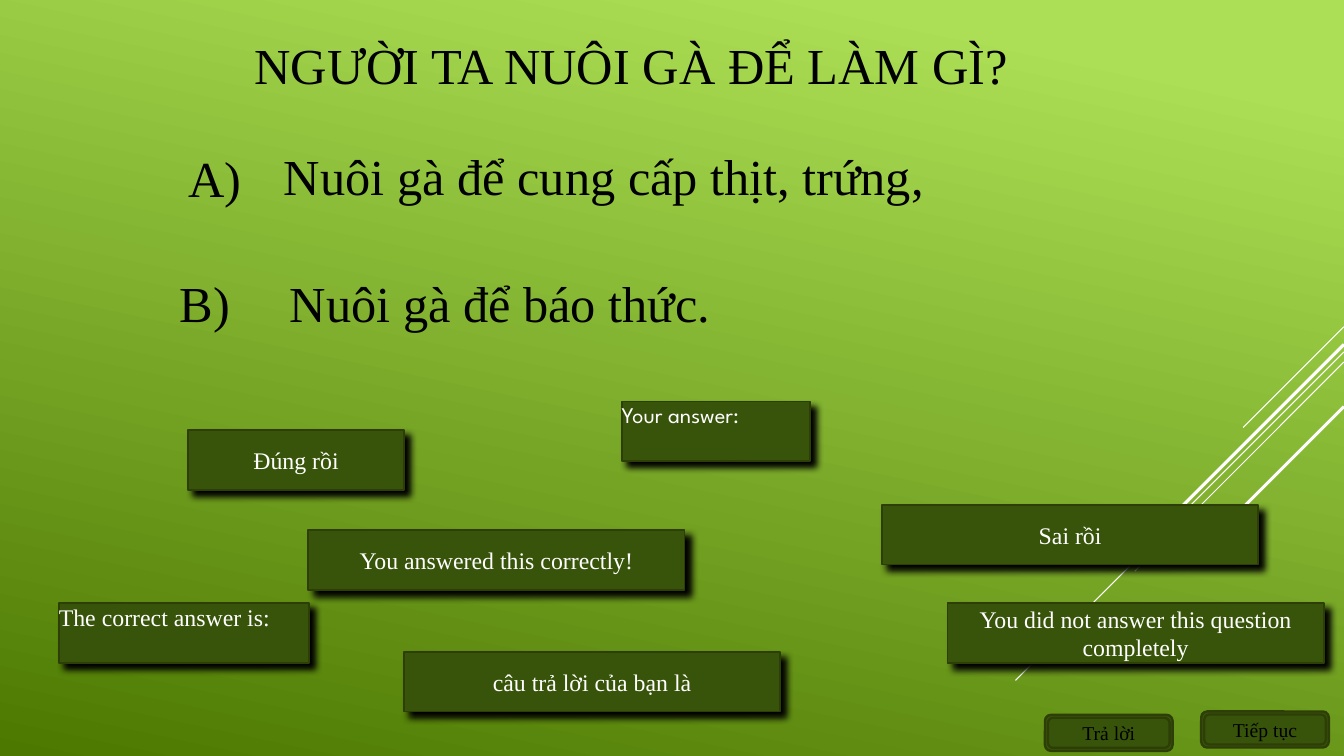
from lxml import etree
from pptx import Presentation
from pptx.dml.color import RGBColor
from pptx.enum.shapes import MSO_CONNECTOR, MSO_SHAPE
from pptx.enum.text import MSO_ANCHOR, PP_ALIGN
from pptx.oxml.ns import qn
from pptx.util import Inches, Pt

RECT = MSO_SHAPE.RECTANGLE
ROUND = MSO_SHAPE.ROUNDED_RECTANGLE
LINE = MSO_CONNECTOR.STRAIGHT
TOP, MID = MSO_ANCHOR.TOP, MSO_ANCHOR.MIDDLE
LEFT, CENTER = PP_ALIGN.LEFT, PP_ALIGN.CENTER

LIME = RGBColor(0xAC, 0xDF, 0x55)
MOSS = RGBColor(0x4C, 0x78, 0x00)
LEAF = RGBColor(0x38, 0x54, 0x0A)
EDGE = RGBColor(0x2E, 0x3E, 0x07)
WHITE = RGBColor(0xFF, 0xFF, 0xFF)
BLACK = RGBColor(0, 0, 0)
SERIF, SANS = "Times New Roman", "League Spartan"

COLS, ROWS = 160, 90
CARD = 7.1
BUTTON = (15.2, 4.3)
INSET = 0.36

RAYS = [(38.9, 12, 0.75), (41.9, 39.1, 0.75), (43.1, 24.9, 0.75),
        (41, 22.9, 2.25), (48.4, 16.7, 2.25)]
CARDS = [
    (22.4, 51.2, 25.7, "Đúng rồi", True, SERIF, 17),
    (105, 60.1, 44.8, "Sai rồi", True, SERIF, 17),
    (36.7, 63.1, 44.8, "You answered this correctly!", True, SERIF, 17),
    (74, 47.8, 22.4, "Your answer:", False, SANS, 16),
    (7, 71.8, 29.8, "The correct answer is:", False, SERIF, 17),
    (112.8, 71.8, 44.8, "You did not answer this question completely", True, SERIF, 17),
    (48.1, 77.6, 44.8, "câu trả lời của bạn là", True, SERIF, 17),
]
BUTTONS = [(124.4, 85.1, "Trả lời"), (143, 84.7, "Tiếp tục")]


def grid(*units):
    return [Inches(unit / 12) for unit in units]


def write(shape, words, size, color, font=SERIF, align=LEFT, anchor=MID):
    frame = shape.text_frame
    frame.text = words
    frame.word_wrap = True
    frame.vertical_anchor = anchor
    frame.margin_left = frame.margin_right = 0
    frame.margin_top = frame.margin_bottom = 0
    para = frame.paragraphs[0]
    para.alignment = align
    style = para.runs[0].font
    style.name, style.size = font, Pt(size)
    style.color.rgb = color


def label(slide, box, words, align=LEFT):
    write(slide.shapes.add_textbox(*grid(*box)), words, 36, BLACK, align=align)


def plate(slide, kind, box, width):
    shape = slide.shapes.add_shape(kind, *grid(*box))
    shape.shadow.inherit = False
    shape.fill.solid()
    shape.fill.fore_color.rgb = LEAF
    shape.line.color.rgb = EDGE
    shape.line.width = Pt(width)
    return shape


def shade(shape):
    effects = shape._element.spPr.find(qn("a:effectLst"))
    outer = etree.SubElement(effects, qn("a:outerShdw"), blurRad=str(Pt(5)),
                             dist=str(Pt(5.7)), dir=str(45 * 60000),
                             algn="tl", rotWithShape="0")
    etree.SubElement(outer, qn("a:srgbClr"), val=str(BLACK))


def backdrop(slide):
    fill = slide.background.fill
    fill.gradient()
    fill.gradient_angle = 258
    for stop, place, color in zip(fill.gradient_stops, (0.1, 1), (LIME, MOSS)):
        stop.position = place
        stop.color.rgb = color


def rays(slide, right):
    for top, run, width in RAYS:
        ray = slide.shapes.add_connector(LINE, *grid(right, top, right - run, top + run))
        ray.line.color.rgb = WHITE
        ray.line.width = Pt(width)
        etree.SubElement(ray._element.spPr, qn("a:effectLst"))


def option(slide, box, mark, words, gap, drop=0):
    left, top, width, height = box
    label(slide, (left, top + drop, gap, height), mark)
    label(slide, (left + gap, top, width - gap, height), words)


def card(slide, box, words, centred, font, size):
    shape = plate(slide, RECT, box, 1.33)
    shade(shape)
    align, anchor = (CENTER, MID) if centred else (LEFT, TOP)
    write(shape, words, size, WHITE, font, align, anchor)


def button(slide, box, words):
    left, top, width, height = box
    plate(slide, ROUND, box, 1.67)
    inner = (left + INSET, top + INSET, width - 2 * INSET, height - 2 * INSET)
    write(plate(slide, ROUND, inner, 1.67), words, 14, BLACK, align=CENTER)


def main():
    deck = Presentation()
    deck.slide_width, deck.slide_height = grid(COLS, ROWS)
    slide = deck.slides.add_slide(deck.slide_layouts[6])
    backdrop(slide)
    rays(slide, COLS)
    label(slide, (7.3, -2.3, 135.7, 19.8), "NGƯỜI TA NUÔI GÀ ĐỂ LÀM GÌ?", CENTER)
    for left, top, width, *rest in CARDS:
        card(slide, (left, top, width, CARD), *rest)
    for left, top, words in BUTTONS:
        button(slide, (left, top, *BUTTON), words)
    option(slide, (22.4, 13.3, 113.5, 15.1), "A)", "Nuôi gà để cung cấp thịt, trứng,", 11.4, 0.3)
    option(slide, (21.4, 32.4, 105.2, 7.2), "B)", "Nuôi gà để báo thức.", 13.1)
    deck.save("out.pptx")


if __name__ == "__main__":
    main()
